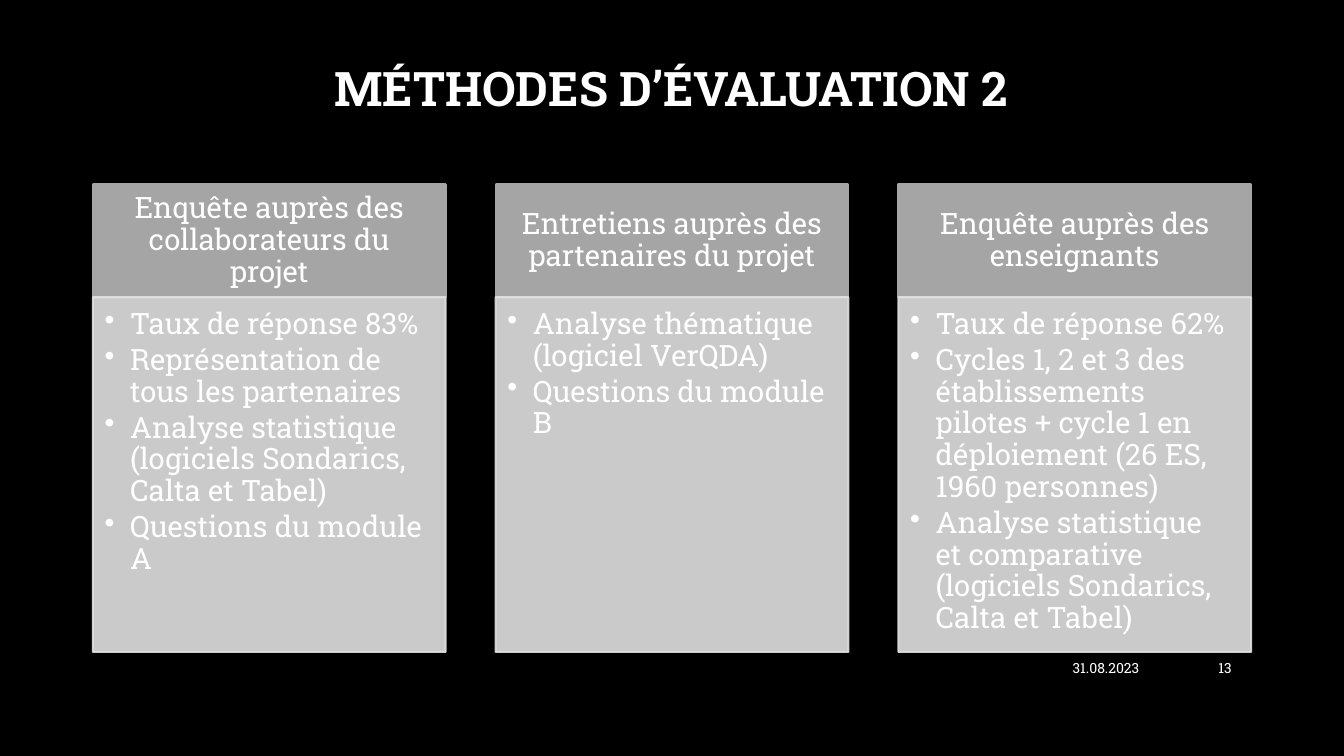
"""Build the slide on evaluation methods, with three titled cards."""
from dataclasses import dataclass

import lxml.etree
import pptx
import pptx.dml.color
import pptx.enum.shapes
import pptx.enum.text
import pptx.oxml.ns
import pptx.util
from pptx.util import Cm

ALIGN = pptx.enum.text.PP_ALIGN
ANCHOR = pptx.enum.text.MSO_ANCHOR


@dataclass(frozen=True)
class Theme:
    """Hold the colours, font and type sizes of the slide."""
    background: str = "000000"
    text: str = "FFFFFF"
    header: str = "A5A5A5"
    body: str = "E1E1E1"
    body_opacity: int = 90
    font: str = "Roboto Slab"
    title_size: int = 34
    card_size: int = 21
    footer_size: int = 10
    border: float = 1.5
    line_spacing: float = 0.9
    item_gap: int = 3


THEME = Theme()

CARDS = [
    ("Enquête auprès des collaborateurs du projet", [
        "Taux de réponse 83%",
        "Représentation de tous les partenaires",
        "Analyse statistique (logiciels Sondarics, Calta et Tabel)",
        "Questions du module A",
    ]),
    ("Entretiens auprès des partenaires du projet", [
        "Analyse thématique (logiciel VerQDA)",
        "Questions du module B",
    ]),
    ("Enquête auprès des enseignants", [
        "Taux de réponse 62%",
        "Cycles 1, 2 et 3 des établissements pilotes + cycle 1 en "
        "déploiement (26 ES, 1960 personnes)",
        "Analyse statistique et comparative (logiciels Sondarics, Calta et Tabel)",
    ]),
]

CARD_LEFT, CARD_PITCH, CARD_WIDTH = 2.34, 10.15, 8.89
HEADER_TOP, HEADER_HEIGHT, BODY_HEIGHT = 4.65, 2.84, 8.94


def rgb(colour):
    """Turn a hex string into a colour."""
    return pptx.dml.color.RGBColor.from_string(colour)


def add_span(para, words, size, bold=False):
    """Add one formatted run to a paragraph."""
    span = para.add_run()
    span.text = words
    span.font.name = THEME.font
    span.font.size = pptx.util.Pt(size)
    span.font.bold = bold
    span.font.color.rgb = rgb(THEME.text)


def set_frame(frame, anchor, insets):
    """Set wrapping, anchor and the left, top, right and bottom insets."""
    frame.word_wrap = True
    frame.auto_size = pptx.enum.text.MSO_AUTO_SIZE.NONE
    frame.vertical_anchor = anchor
    (frame.margin_left, frame.margin_top,
     frame.margin_right, frame.margin_bottom) = [Cm(inset) for inset in insets]


def set_opacity(panel, percent):
    """Make the solid fill and line of a panel partly transparent."""
    for colour in panel.element.spPr.iter(pptx.oxml.ns.qn("a:srgbClr")):
        lxml.etree.SubElement(colour, pptx.oxml.ns.qn("a:alpha"),
                              val=str(percent * 1000))


def add_bullet(para):
    """Give a paragraph a hanging bullet."""
    properties = para._p.get_or_add_pPr()
    properties.set("marL", str(Cm(0.64)))
    properties.set("indent", str(-Cm(0.64)))
    lxml.etree.SubElement(properties, pptx.oxml.ns.qn("a:buChar"), char="•")


def add_panel(page, left, top, height, colour):
    """Add one plain rectangle of a card."""
    panel = page.shapes.add_shape(
        pptx.enum.shapes.MSO_SHAPE.RECTANGLE,
        Cm(left), Cm(top), Cm(CARD_WIDTH), Cm(height))
    panel.shadow.inherit = False
    panel.line.width = pptx.util.Pt(THEME.border)
    for fill in (panel.fill, panel.line.fill):
        fill.solid()
        fill.fore_color.rgb = rgb(colour)
    return panel


def add_card(page, left, heading, items):
    """Add a header with a bulleted panel below it."""
    header = add_panel(page, left, HEADER_TOP, HEADER_HEIGHT, THEME.header)
    set_frame(header.text_frame, ANCHOR.MIDDLE, (0.41, 0.23, 0.41, 0.23))
    para = header.text_frame.paragraphs[0]
    para.alignment = ALIGN.CENTER
    para.line_spacing = THEME.line_spacing
    add_span(para, heading, THEME.card_size)

    body = add_panel(page, left, HEADER_TOP + HEADER_HEIGHT, BODY_HEIGHT,
                     THEME.body)
    set_opacity(body, THEME.body_opacity)
    frame = body.text_frame
    set_frame(frame, ANCHOR.TOP, (0.3, 0.3, 0.41, 0.46))
    for index, item in enumerate(items):
        para = frame.add_paragraph() if index else frame.paragraphs[0]
        para.alignment = ALIGN.LEFT
        para.line_spacing = THEME.line_spacing
        para.space_after = pptx.util.Pt(THEME.item_gap)
        add_bullet(para)
        add_span(para, item, THEME.card_size)


def add_title(page, words):
    """Place and fill the title placeholder."""
    title = page.shapes.title
    title.left, title.top = Cm(2.54), Cm(0.46)
    title.width, title.height = Cm(28.75), Cm(3.68)
    set_frame(title.text_frame, ANCHOR.MIDDLE, (0.25, 0.13, 0.25, 0.13))
    para = title.text_frame.paragraphs[0]
    para.alignment = ALIGN.CENTER
    para.line_spacing = THEME.line_spacing
    add_span(para, words, THEME.title_size, bold=True)


def add_footer(page, left, width, words):
    """Add a small right-aligned footer text."""
    box = page.shapes.add_textbox(Cm(left), Cm(16.33), Cm(width), Cm(1.02))
    set_frame(box.text_frame, ANCHOR.MIDDLE, (0.25, 0.13, 0.25, 0.13))
    para = box.text_frame.paragraphs[0]
    para.alignment = ALIGN.RIGHT
    add_span(para, words, THEME.footer_size)


def main():
    """Build and save the deck."""
    deck = pptx.Presentation()
    deck.slide_width, deck.slide_height = Cm(33.87), Cm(19.05)
    page = deck.slides.add_slide(deck.slide_layouts.get_by_name("Title Only"))
    page.background.fill.solid()
    page.background.fill.fore_color.rgb = rgb(THEME.background)
    add_title(page, "MÉTHODES D’ÉVALUATION 2")
    for index, (heading, items) in enumerate(CARDS):
        add_card(page, CARD_LEFT + index * CARD_PITCH, heading, items)
    add_footer(page, 21.34, 7.62, "31.08.2023")
    add_footer(page, 29.21, 2.08, "13")
    deck.save("out.pptx")


if __name__ == "__main__":
    main()
